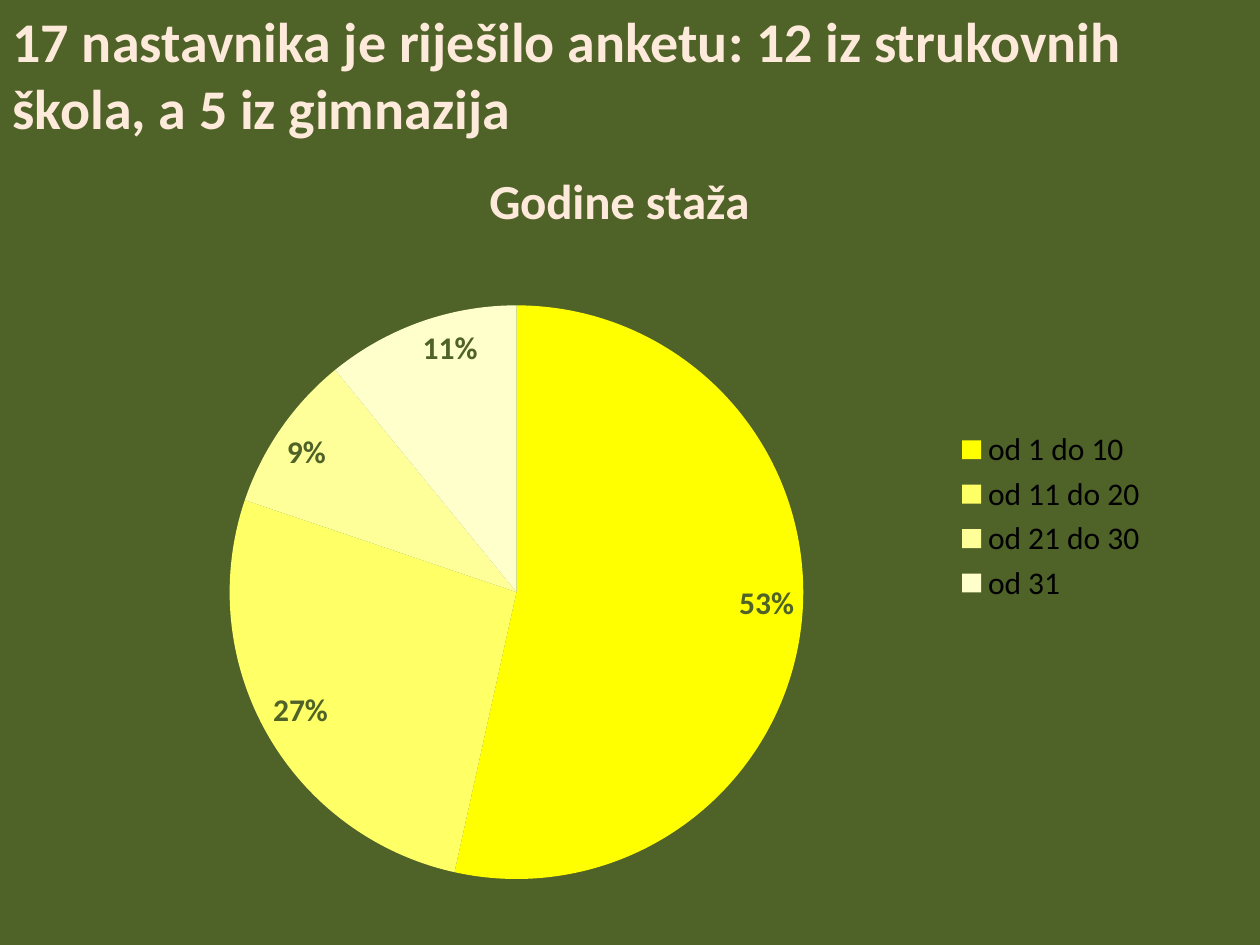
from lxml import etree
from pptx import Presentation
from pptx.chart.data import CategoryChartData
from pptx.dml.color import RGBColor
from pptx.enum.chart import XL_CHART_TYPE, XL_LABEL_POSITION, XL_LEGEND_POSITION
from pptx.enum.text import MSO_ANCHOR, MSO_AUTO_SIZE, PP_ALIGN
from pptx.oxml.ns import qn
from pptx.util import Inches, Pt

PIE = XL_CHART_TYPE.PIE
INSIDE_END = XL_LABEL_POSITION.INSIDE_END
RIGHT = XL_LEGEND_POSITION.RIGHT
TOP = MSO_ANCHOR.TOP
NO_FIT = MSO_AUTO_SIZE.NONE
LEFT = PP_ALIGN.LEFT

WIDTH, HEIGHT = Inches(10), Inches(7.5)
TITLE_ONLY = 5
GREEN, CREAM, BLACK = "4F6228", "FDEADA", "000000"
TITLE_BOX = (0, 0, 1, 0.157)
CHART_BOX = (0.062, 0.145, 0.859, 0.803)
PLOT_SHARES = {"x": 0.14, "y": 0.22, "w": 0.53, "h": 0.76}
SENIORITY = {
    "od 1 do 10": (54, "FFFF00"),
    "od 11 do 20": (27, "FFFF66"),
    "od 21 do 30": (9, "FFFF99"),
    "od 31": (11, "FFFFCC"),
}


def colour(value):
    return RGBColor.from_string(value)


def apply(target, values):
    for name, value in values.items():
        setattr(target, name, value)


def format_font(font, size, value, bold):
    apply(font, {"name": "Calibri", "size": Pt(size), "bold": bold})
    font.color.rgb = colour(value)


def place(box):
    left, top, width, height = box
    return [round(share * side) for share, side in
            ((left, WIDTH), (top, HEIGHT), (width, WIDTH), (height, HEIGHT))]


def add_heading(page, box, text):
    heading = page.shapes.title
    apply(heading, dict(zip(("left", "top", "width", "height"), place(box))))
    frame = heading.text_frame
    apply(frame, {"word_wrap": True, "auto_size": NO_FIT, "vertical_anchor": TOP})
    para = frame.paragraphs[0]
    para.alignment = LEFT
    span = para.add_run()
    span.text = text
    format_font(span.font, 32, CREAM, True)


def set_plot_layout(chart, shares):
    area = chart.plots[0]._element.getparent()
    for old in area.findall(qn("c:layout")):
        area.remove(old)
    layout = etree.Element(qn("c:layout"))
    area.insert(0, layout)
    manual = etree.SubElement(layout, qn("c:manualLayout"))
    settings = {"layoutTarget": "inner", "xMode": "edge", "yMode": "edge", **shares}
    for name, value in settings.items():
        etree.SubElement(manual, qn(f"c:{name}"), val=str(value))


def add_seniority_pie(page, box, title):
    data = CategoryChartData()
    data.categories = list(SENIORITY)
    data.add_series("Series 1", [value for value, fill in SENIORITY.values()])
    chart = page.shapes.add_chart(PIE, *place(box), data).chart
    format_font(chart.font, 18, BLACK, False)
    apply(chart, {"has_title": True, "has_legend": True})
    frame = chart.chart_title.text_frame
    frame.text = title
    format_font(frame.paragraphs[0].runs[0].font, 28, CREAM, True)
    chart.chart_title.include_in_layout = False
    apply(chart.legend, {"position": RIGHT, "include_in_layout": False})
    format_font(chart.legend.font, 18, BLACK, False)

    plot = chart.plots[0]
    apply(plot, {"vary_by_categories": True, "has_data_labels": True})
    labels = plot.data_labels
    apply(labels, {"show_percentage": True, "show_value": False,
                   "number_format": "0%", "number_format_is_linked": False,
                   "position": INSIDE_END})
    format_font(labels.font, 18, GREEN, True)
    for index, (value, fill) in enumerate(SENIORITY.values()):
        slice_format = plot.series[0].points[index].format
        slice_format.fill.solid()
        slice_format.fill.fore_color.rgb = colour(fill)
        slice_format.line.fill.background()
    set_plot_layout(chart, PLOT_SHARES)


def main():
    deck = Presentation()
    apply(deck, {"slide_width": WIDTH, "slide_height": HEIGHT})
    page = deck.slides.add_slide(deck.slide_layouts[TITLE_ONLY])
    page.background.fill.solid()
    page.background.fill.fore_color.rgb = colour(GREEN)
    add_heading(page, TITLE_BOX,
                "17 nastavnika je riješilo anketu: 12 iz strukovnih škola, a 5 iz gimnazija")
    add_seniority_pie(page, CHART_BOX, "Godine staža")
    deck.save("out.pptx")


if __name__ == "__main__":
    main()
